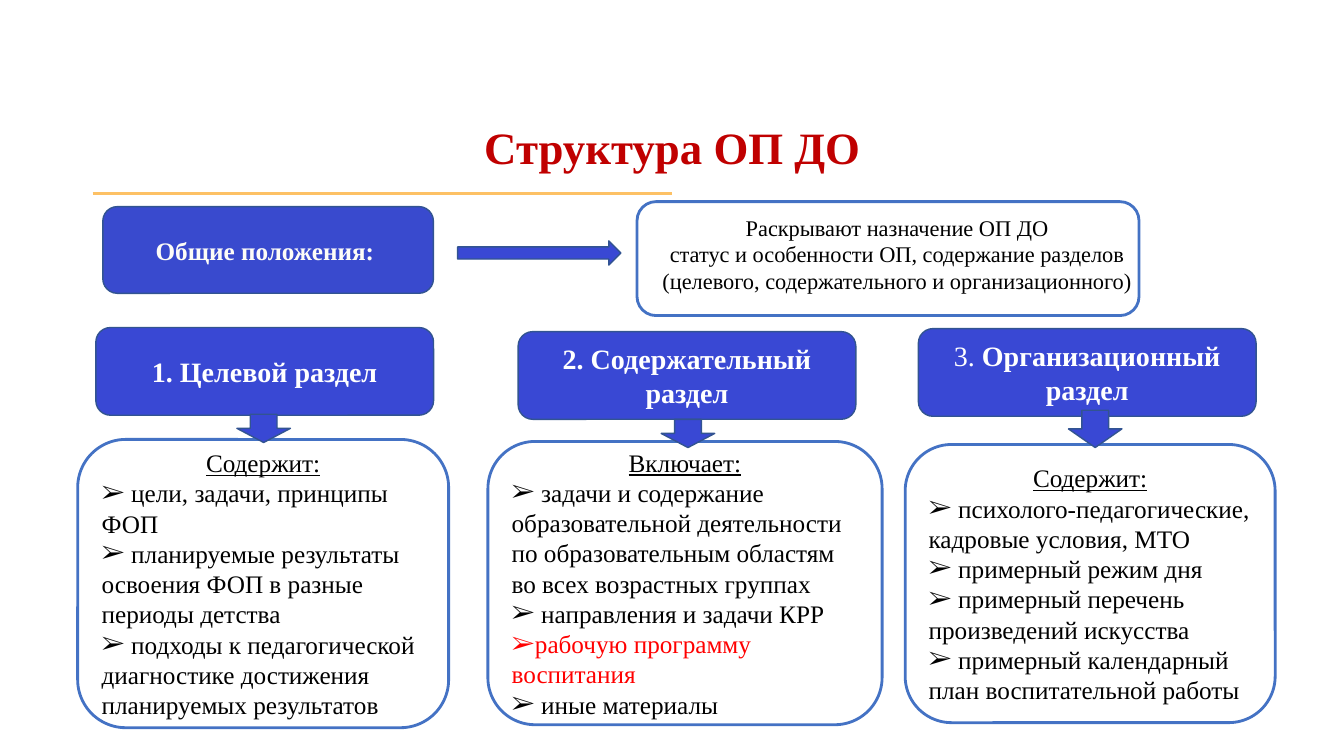
from lxml.etree import SubElement
from pptx import Presentation
from pptx.dml.color import RGBColor
from pptx.enum.shapes import MSO_CONNECTOR, MSO_SHAPE
from pptx.enum.text import MSO_ANCHOR, PP_ALIGN
from pptx.oxml.ns import qn
from pptx.util import Inches, Pt

# Content: every place is left, top, width, height in percent of the slide
WIDTH, HEIGHT = 13.33, 7.5
FONT = "Times New Roman"
BLUE, EDGE, OUTLINE = "3948D4", "325491", "4472C4"
WHITE, BLACK, RED = "FFFFFF", "000000", "FF0000"

TITLE = ("Структура ОП ДО", (6.9, 14.93, 86.25, 9.73))
RULE = ((6.9, 25.6), (50.03, 25.6))
GENERAL = ("Общие положения: ", (7.65, 27.33, 24.6, 11.47))
GENERAL_ARROW = (34.05, 31.87, 12.15, 3.2)
PURPOSE_FRAME = (47.4, 26.67, 37.35, 15.07)
PURPOSE_TEXT = (47.7, 27.6, 38.1, 12.13)
PURPOSE = [
    "Раскрывают назначение ОП ДО",
    "статус и особенности ОП, содержание разделов "
    "(целевого, содержательного и организационного)",
]
HEADING_SIZE = (25.13, 11.6)
ARROW_WIDTH = 3.98
SECTIONS = [
    {
        "heading": [("1. Целевой раздел", True)],
        "heading_at": (7.13, 43.33),
        "card_at": (5.78, 58.13, 27.6, 38.13),
        "arrow_at": (17.63, 54.8, ARROW_WIDTH, 3.73),
        "lead": "Содержит:",
        "points": [
            " цели, задачи, принципы ФОП",
            " планируемые результаты освоения ФОП в разные периоды детства",
            " подходы к педагогической диагностике достижения планируемых результатов",
        ],
    },
    {
        "heading": [("2. Содержательный раздел", True)],
        "heading_at": (38.55, 43.87),
        "card_at": (36.3, 58.4, 29.33, 37.47),
        "arrow_at": (49.2, 55.47, ARROW_WIDTH, 3.73),
        "lead": "Включает:",
        "points": [
            " задачи и содержание образовательной деятельности "
            "по образовательным областям во всех возрастных группах",
            " направления и задачи КРР",
            "рабочую программу воспитания",
            " иные материалы",
        ],
        "highlight": "рабочую программу воспитания",
    },
    {
        "heading": [("3. ", False), ("Организационный раздел", True)],
        "heading_at": (68.33, 43.47),
        "card_at": (67.35, 58.8, 27.53, 36.8),
        "arrow_at": (79.5, 54.27, ARROW_WIDTH, 4.93),
        "lead": "Содержит:",
        "points": [
            " психолого-педагогические, кадровые условия, МТО",
            " примерный режим дня",
            " примерный перечень произведений искусства",
            " примерный календарный план воспитательной работы",
        ],
    },
]


def color(hex_value):
    return RGBColor.from_string(hex_value)


def place(percents):
    """Turn alternating horizontal and vertical percents into lengths."""
    sides = (WIDTH, HEIGHT) * (len(percents) // 2)
    return [Inches(side * share / 100) for side, share in zip(sides, percents)]


def add_block(kind, at, fill, line, weight=1):
    block = slide.shapes.add_shape(kind, *place(at))
    block.shadow.inherit = False
    block.fill.solid()
    block.fill.fore_color.rgb = color(fill)
    block.line.color.rgb = color(line)
    block.line.width = Pt(weight)
    return block


def write(holder, paragraphs, anchor=MSO_ANCHOR.MIDDLE, spacing=None):
    """Each paragraph is (runs, bulleted); each run is (text, size, hex, extras)."""
    frame = holder.text_frame
    frame.word_wrap = True
    frame.vertical_anchor = anchor
    for index, (runs, bulleted) in enumerate(paragraphs):
        paragraph = frame.add_paragraph() if index else frame.paragraphs[0]
        paragraph.alignment = PP_ALIGN.LEFT if bulleted else PP_ALIGN.CENTER
        if spacing:
            paragraph.line_spacing = spacing
        if bulleted:
            properties = paragraph._p.get_or_add_pPr()
            properties.set("marL", "0")
            properties.set("indent", "0")
            SubElement(properties, qn("a:buFont"), typeface=FONT)
            SubElement(properties, qn("a:buChar"), char="➢")
        for text, size, hex_value, extras in runs:
            run = paragraph.add_run()
            run.text = text
            run.font.color.rgb = color(hex_value)
            for name, value in {"name": FONT, "size": Pt(size), **extras}.items():
                setattr(run.font, name, value)


presentation = Presentation()
presentation.slide_width, presentation.slide_height = Inches(WIDTH), Inches(HEIGHT)
slide = presentation.slides.add_slide(presentation.slide_layouts[6])

# Title and rule
rule = slide.shapes.add_connector(MSO_CONNECTOR.STRAIGHT, *place(RULE[0] + RULE[1]))
rule.line.color.rgb = color("FDC165")
rule.line.width = Pt(2.5)
SubElement(rule._element.spPr, qn("a:effectLst"))
title_text, title_at = TITLE
title = slide.shapes.add_textbox(*place(title_at))
write(title, [([(title_text, 32, "C00000", {"bold": True})], False)], spacing=0.9)

# General provisions and their purpose
general_text, general_at = GENERAL
general = add_block(MSO_SHAPE.ROUNDED_RECTANGLE, general_at, "394ACE", EDGE)
write(general, [([(general_text, 18, "FDFCF7", {"bold": True})], False)])
add_block(MSO_SHAPE.ROUNDED_RECTANGLE, PURPOSE_FRAME, WHITE, OUTLINE, 2)
purpose = slide.shapes.add_textbox(*place(PURPOSE_TEXT))
write(purpose, [([(line, 16, BLACK, {})], False) for line in PURPOSE], MSO_ANCHOR.TOP)
add_block(MSO_SHAPE.RIGHT_ARROW, GENERAL_ARROW, BLUE, EDGE)

# Three sections: heading, card, arrow between them
for section in SECTIONS:
    heading = add_block(MSO_SHAPE.ROUNDED_RECTANGLE,
                        section["heading_at"] + HEADING_SIZE, BLUE, EDGE)
    write(heading, [([(text, 20, WHITE, {"bold": bold})
                      for text, bold in section["heading"]], False)])
    card = add_block(MSO_SHAPE.ROUNDED_RECTANGLE, section["card_at"], WHITE, OUTLINE, 2)
    lead = ([(section["lead"], 18, BLACK, {"underline": True})], False)
    points = [([(point, 18, RED if point == section.get("highlight") else BLACK, {})], True)
              for point in section["points"]]
    write(card, [lead] + points)
    add_block(MSO_SHAPE.DOWN_ARROW, section["arrow_at"], BLUE, EDGE)

presentation.save("out.pptx")
